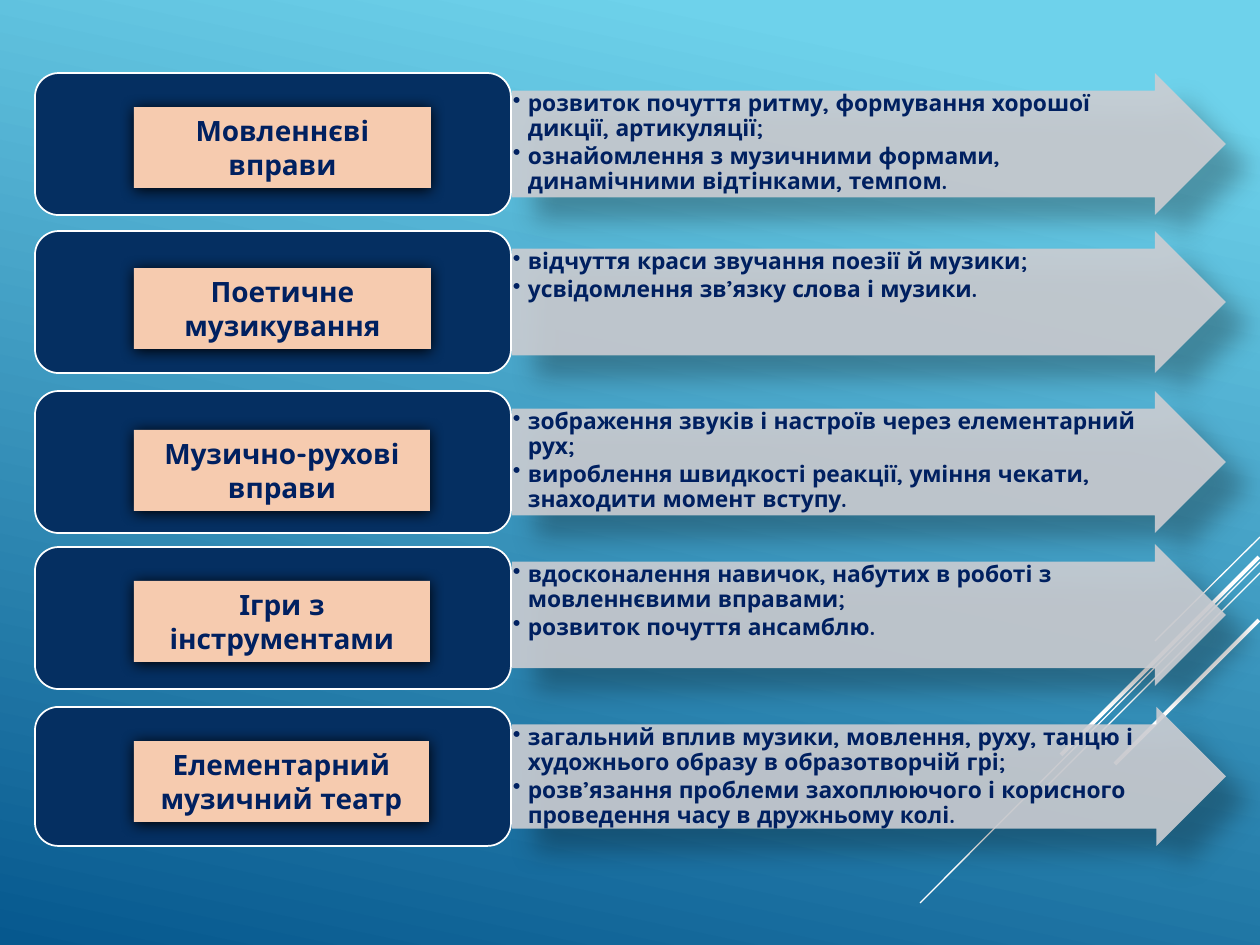
import pptx
import pptx.dml.color
import pptx.enum.shapes
import pptx.enum.text
import pptx.oxml.ns
import pptx.util
from lxml import etree

SHAPES = pptx.enum.shapes.MSO_SHAPE
STREAKS = [
    (1260, 537, 1155, 641, 0.75),
    (1260, 562, 920, 903, 0.75),
    (1260, 573, 1043, 790, 0.75),
    (1259, 557, 1061, 755, 2.25),
    (1259, 620, 1115, 764, 2.25),
]
ROWS = [
    (73, 73, 107, 142, 297, "Мовленнєві вправи",
     ["розвиток почуття ритму, формування хорошої дикції, артикуляції;",
      "ознайомлення з музичними формами, динамічними відтінками, темпом."]),
    (231, 231, 268, 142, 297, "Поетичне музикування",
     ["відчуття краси звучання поезії й музики;",
      "усвідомлення зв’язку слова і музики."]),
    (391, 391, 430, 142, 296, "Музично-рухові вправи",
     ["зображення звуків і настроїв через елементарний рух;",
      "вироблення швидкості реакції, уміння чекати, знаходити момент вступу."]),
    (547, 544, 581, 142, 296, "Ігри з інструментами",
     ["вдосконалення навичок, набутих в роботі з мовленнєвими вправами;",
      "розвиток почуття ансамблю."]),
    (707, 707, 741, 139, 295, "Елементарний музичний театр",
     ["загальний вплив музики, мовлення, руху, танцю і художнього образу в образотворчій грі;",
      "розв’язання проблеми захоплюючого і корисного проведення часу в дружньому колі."]),
]


def px(*lengths):
    return [round(length * 914400 / 126) for length in lengths]


def color(value):
    return pptx.dml.color.RGBColor.from_string(value)


def add_xml(parent, tag, **attributes):
    values = {name: str(value) for name, value in attributes.items()}
    return etree.SubElement(parent, pptx.oxml.ns.qn(tag), values)


class SlideBuilder:
    """Draws the elements of one slide in a shared style."""

    font_name = "Quicksand"
    text_color = "002060"

    def __init__(self, slide):
        self.slide = slide

    def background(self, stops, angle):
        fill = self.slide.background.fill
        fill.gradient()
        fill.gradient_angle = 360 - angle
        for stop, (position, value) in zip(fill.gradient_stops, stops):
            stop.position = position
            stop.color.rgb = color(value)

    def streak(self, x1, y1, x2, y2, width):
        connector = self.slide.shapes.add_connector(
            pptx.enum.shapes.MSO_CONNECTOR.STRAIGHT, *px(x1, y1, x2, y2))
        connector.line.color.rgb = color("FFFFFF")
        connector.line.width = pptx.util.Pt(width)
        add_xml(connector._element.spPr, "a:effectLst")

    def shape(self, kind, left, top, width, height, fill, line=None):
        shape = self.slide.shapes.add_shape(kind, *px(left, top, width, height))
        shape.shadow.inherit = False
        shape.fill.solid()
        shape.fill.fore_color.rgb = color(fill)
        if line:
            shape.line.color.rgb = color(line)
            shape.line.width = pptx.util.Pt(1)
        else:
            shape.line.fill.background()
        return shape

    def shadow(self, shape, opacity, blur, distance, angle):
        effects = shape._element.spPr.find(pptx.oxml.ns.qn("a:effectLst"))
        outer = add_xml(effects, "a:outerShdw", blurRad=pptx.util.Pt(blur),
                        dist=pptx.util.Pt(distance), dir=angle * 60000,
                        algn="ctr", rotWithShape=0)
        black = add_xml(outer, "a:srgbClr", val="000000")
        add_xml(black, "a:alpha", val=opacity * 1000)

    def format_text(self, paragraph, size):
        for run in paragraph.runs:
            run.font.name = self.font_name
            run.font.size = pptx.util.Pt(size)
            run.font.bold = True
            run.font.color.rgb = color(self.text_color)

    def arrow(self, top, height):
        arrow = self.shape(SHAPES.RIGHT_ARROW, 512, top, 714, height, "CCCDD2")
        arrow.adjustments[0] = 0.75
        arrow.adjustments[1] = 0.5
        fill = arrow._element.spPr.find(".//" + pptx.oxml.ns.qn("a:srgbClr"))
        add_xml(fill, "a:alpha", val=90000)
        self.shadow(arrow, 30, 15, 18, 45)

    def box(self, top, height):
        self.shape(SHAPES.ROUNDED_RECTANGLE, 35, top, 476, height, "052F61", "FFFFFF")

    def label(self, top, width, text):
        label = self.shape(SHAPES.RECTANGLE, 134, top, width, 81, "F6CBAF")
        self.shadow(label, 100, 8.5, 1, 90)
        frame = label.text_frame
        frame.text = text
        frame.word_wrap = True
        frame.auto_size = pptx.enum.text.MSO_AUTO_SIZE.SHAPE_TO_FIT_TEXT
        paragraph = frame.paragraphs[0]
        paragraph.alignment = pptx.enum.text.PP_ALIGN.CENTER
        self.format_text(paragraph, 16)

    def bullets(self, top, height, items):
        frame = self.slide.shapes.add_textbox(*px(512, top, 661, height)).text_frame
        frame.word_wrap = True
        margin, indent = px(1, 15)
        frame.margin_left = frame.margin_right = margin
        frame.margin_top = frame.margin_bottom = margin
        frame.text = "\n".join(items)
        for paragraph in frame.paragraphs:
            paragraph.level = 1
            paragraph.line_spacing = 0.9
            paragraph.space_after = pptx.util.Pt(2)
            properties = paragraph._p.get_or_add_pPr()
            properties.set("marL", str(indent))
            properties.set("indent", str(-indent))
            add_xml(properties, "a:buChar", char="•")
            self.format_text(paragraph, 13)


def main():
    presentation = pptx.Presentation()
    presentation.slide_width, presentation.slide_height = px(1260, 945)
    slide = presentation.slides.add_slide(presentation.slide_layouts[6])
    builder = SlideBuilder(slide)
    builder.background([(0.1, "6ED2EB"), (1, "06588E")], 102)
    for streak in STREAKS:
        builder.streak(*streak)
    for box_top, arrow_top, label_top, height, label_width, title, items in ROWS:
        builder.arrow(arrow_top, height)
        builder.bullets(arrow_top + 18, height - 35, items)
        builder.box(box_top, height)
        builder.label(label_top, label_width, title)
    presentation.save("out.pptx")


if __name__ == "__main__":
    main()
